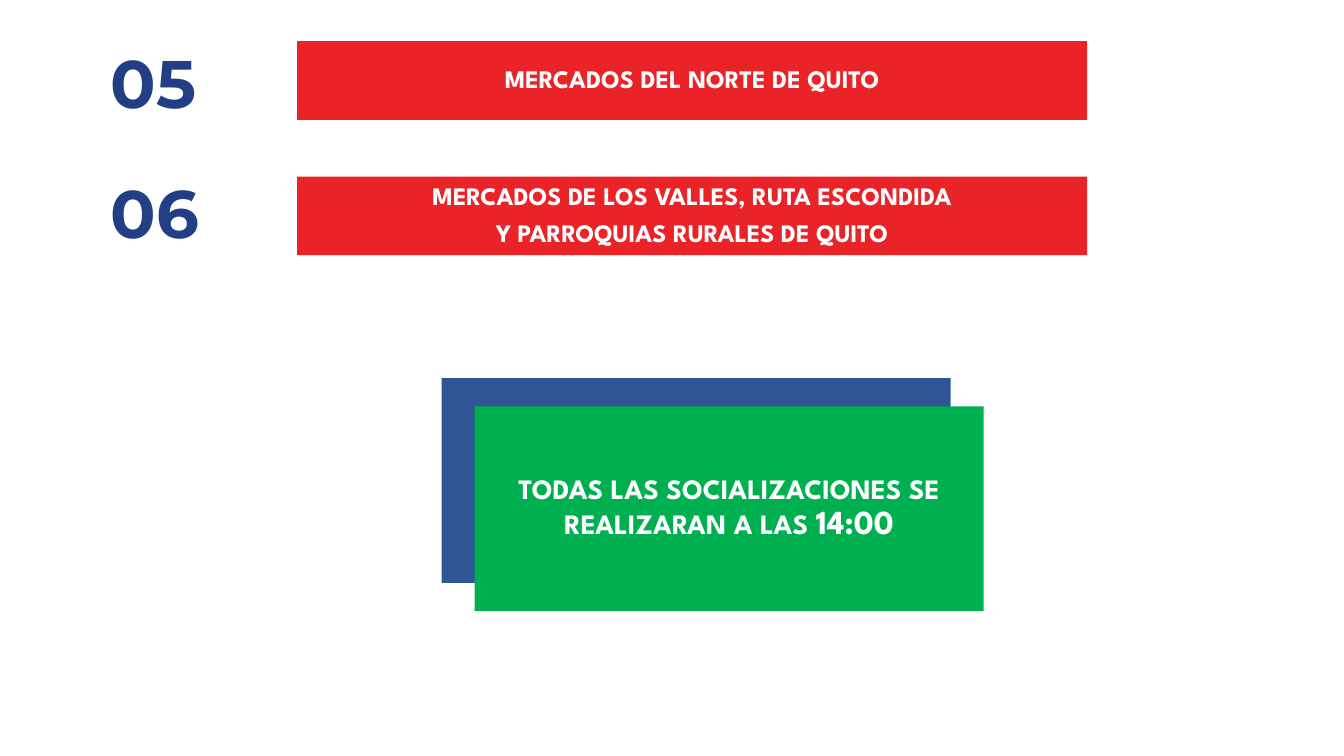
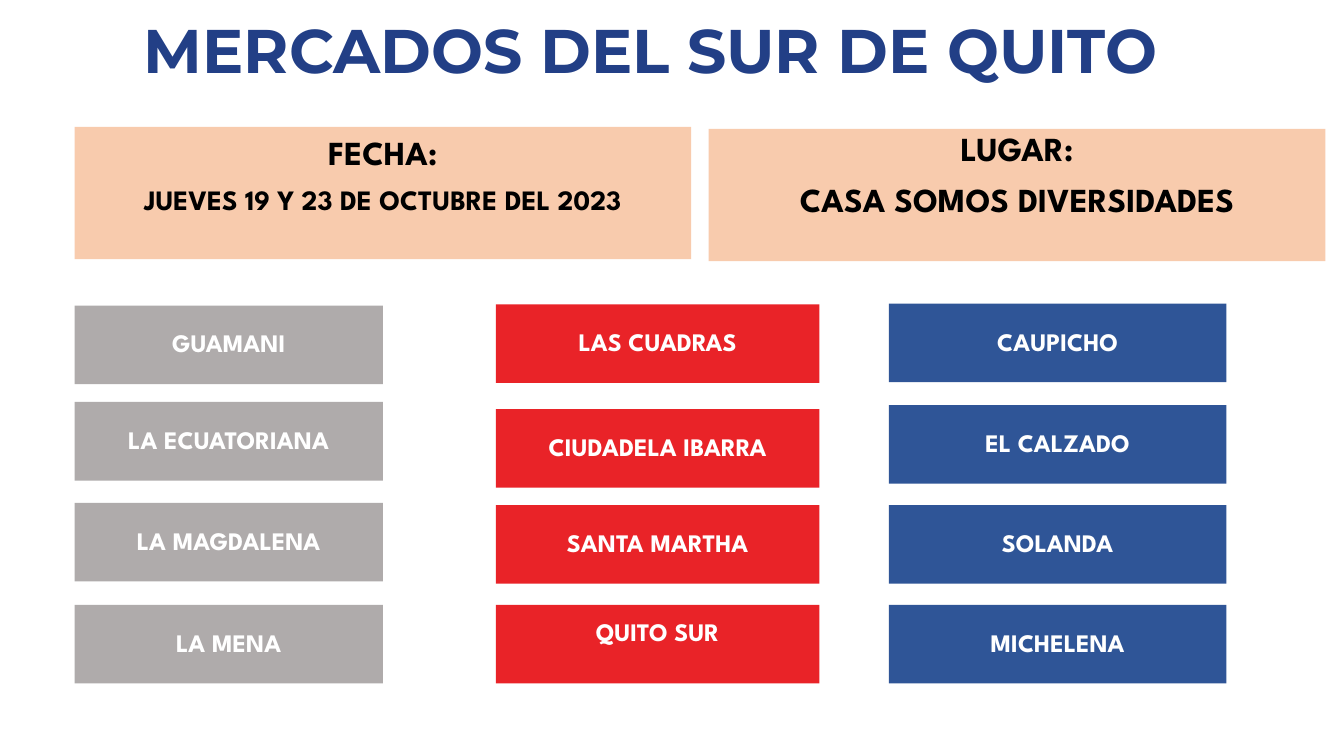
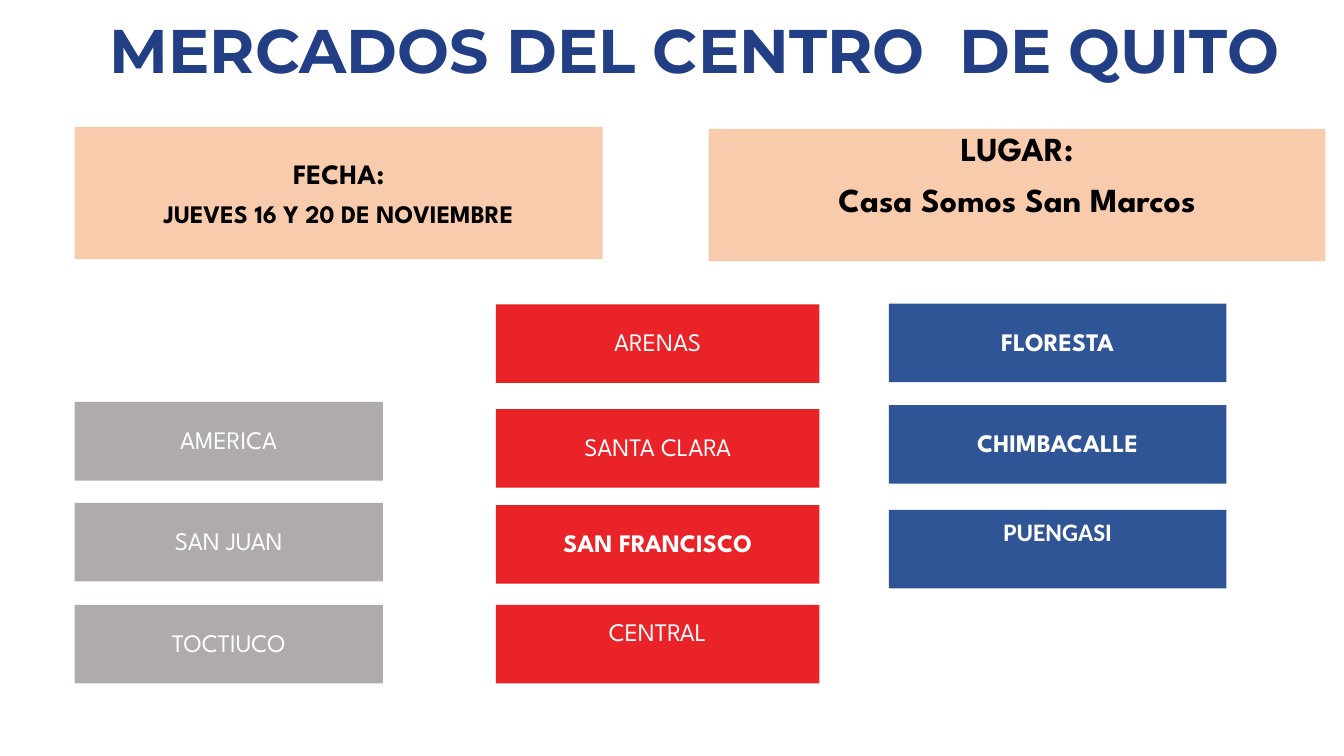
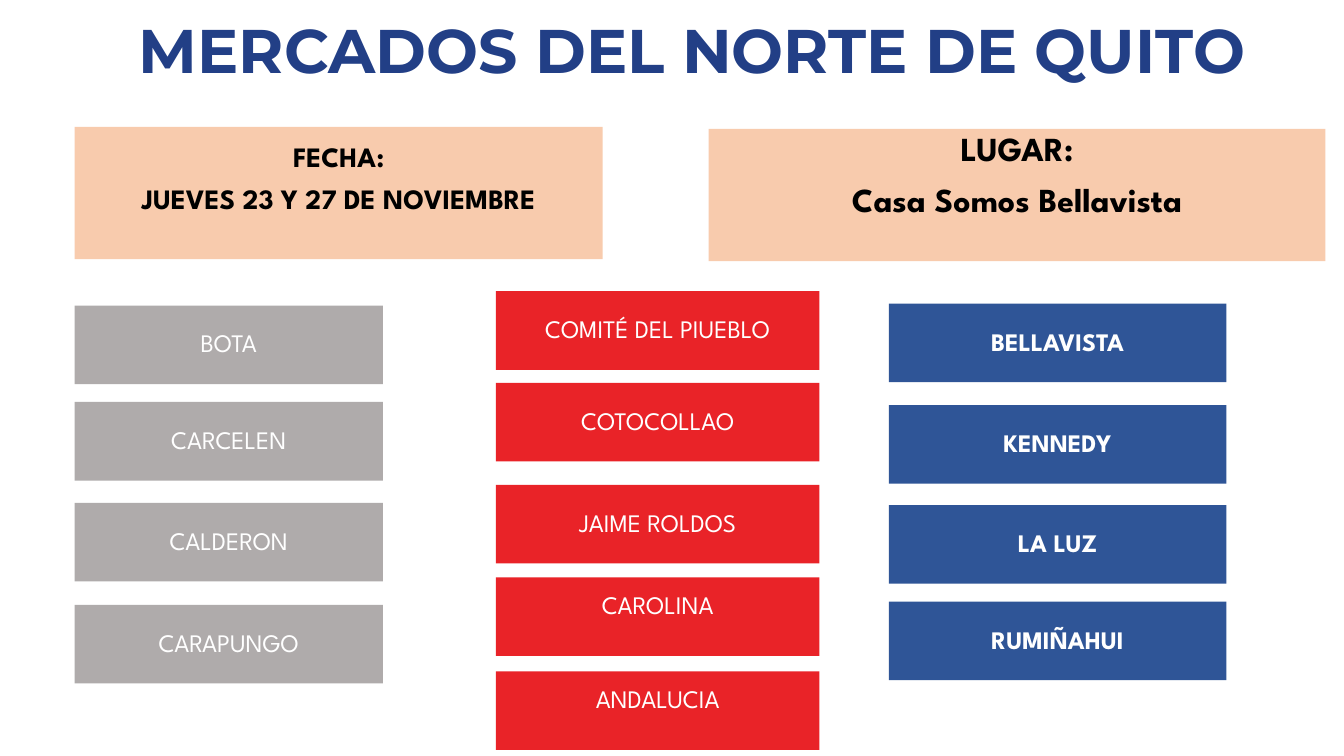
from dataclasses import dataclass

from pptx import Presentation
from pptx.dml.color import RGBColor
from pptx.enum.shapes import MSO_SHAPE
from pptx.enum.text import MSO_ANCHOR, PP_ALIGN
from pptx.util import Cm, Pt

RECT = MSO_SHAPE.RECTANGLE
TOP, MIDDLE = MSO_ANCHOR.TOP, MSO_ANCHOR.MIDDLE
LEFT, CENTER = PP_ALIGN.LEFT, PP_ALIGN.CENTER


class Theme:
    navy = RGBColor.from_string("223F86")
    blue = RGBColor.from_string("2F5597")
    red = RGBColor.from_string("E92328")
    gray = RGBColor.from_string("AFABAB")
    green = RGBColor.from_string("00B050")
    peach = RGBColor.from_string("F8CBAD")
    white = RGBColor.from_string("FFFFFF")
    black = RGBColor.from_string("000000")
    body, heading, plain = "League Spartan", "Montserrat", "Calibri"
    bar, notice, info, title, number = 18, 20, 24, 44, 48
    line_spacing, space_after = 0.9, 0.42


@dataclass
class Bar:
    text: str
    bold: bool = True
    raised: bool = False
    font: str = Theme.body
    anchor: int = MIDDLE
    spacing: float = Theme.line_spacing


def light(text, raised=False):
    return Bar(text, False, raised)


BAR_HEIGHT = 1.98
AGENDA = [
    ("05", 1.04, ["MERCADOS DEL NORTE DE QUITO"]),
    ("06", 4.45, ["MERCADOS DE LOS VALLES, RUTA ESCONDIDA",
                  "Y PARROQUIAS RURALES DE QUITO"]),
]
NUMBER_TOPS = [1.17, 4.45]
NOTICE = "TODAS LAS SOCIALIZACIONES SE REALIZARAN A LAS "
NOTICE_TIME = "14:00"

COLUMNS = [
    (1.88, 7.77, Theme.gray),
    (12.5, 8.15, Theme.red),
    (22.4, 8.51, Theme.blue),
]
GRAY_TOPS = [7.7, 10.13, 12.67, 15.24]
RED_TOPS = [7.67, 10.31, 12.73, 15.24]
BLUE_TOPS = [7.65, 10.21, 12.73, 15.24]

MARKETS = [
    {
        "title": "MERCADOS DEL SUR DE QUITO", "title_width": 28.6,
        "date": [("FECHA:", Theme.info),
                 ("JUEVES 19 Y 23 DE OCTUBRE DEL 2023", Theme.notice)],
        "date_width": 15.54, "date_inset": 0.23,
        "place": "CASA SOMOS DIVERSIDADES",
        "columns": [
            (GRAY_TOPS, [Bar("GUAMANI"), Bar("LA ECUATORIANA"),
                         Bar("LA MAGDALENA"), Bar("LA MENA")]),
            (RED_TOPS, [Bar("LAS CUADRAS"), Bar("CIUDADELA IBARRA"),
                        Bar("SANTA MARTHA"), Bar("QUITO SUR", raised=True)]),
            (BLUE_TOPS, [Bar("CAUPICHO"), Bar("EL CALZADO"),
                         Bar("SOLANDA"), Bar("MICHELENA")]),
        ],
    },
    {
        "title": "MERCADOS DEL CENTRO  DE QUITO", "title_width": 30.81,
        "date": [("FECHA:", Theme.notice),
                 ("JUEVES 16 Y 20 DE NOVIEMBRE", Theme.bar)],
        "date_width": 13.31, "date_inset": 0.83,
        "place": "Casa Somos San Marcos",
        "columns": [
            (GRAY_TOPS[1:], [light("AMERICA"), light("SAN JUAN"),
                             light("TOCTIUCO")]),
            (RED_TOPS, [light("ARENAS"), light("SANTA CLARA"),
                        Bar("SAN FRANCISCO"), light("CENTRAL", True)]),
            (BLUE_TOPS[:2] + [12.85],
             [Bar("FLORESTA"), Bar("CHIMBACALLE"),
              Bar("PUENGASI", font=Theme.plain, anchor=TOP, spacing=1.0)]),
        ],
    },
    {
        "title": "MERCADOS DEL NORTE DE QUITO", "title_width": 30.68,
        "date": [("FECHA:", Theme.notice),
                 ("JUEVES 23 Y 27 DE NOVIEMBRE", Theme.notice)],
        "date_width": 13.31, "date_inset": 0.42,
        "place": "Casa Somos Bellavista",
        "columns": [
            (GRAY_TOPS, [light("BOTA"), light("CARCELEN"),
                         light("CALDERON"), light("CARAPUNGO")]),
            ([7.34, 9.65, 12.22, 14.55, 16.92],
             [light("COMITÉ DEL PIUEBLO"), light("COTOCOLLAO"),
              light("JAIME ROLDOS"), light("CAROLINA", True),
              light("ANDALUCIA", True)]),
            (BLUE_TOPS[:3] + [15.16], [Bar("BELLAVISTA"), Bar("KENNEDY"),
                                       Bar("LA LUZ"), Bar("RUMIÑAHUI")]),
        ],
    },
]


def set_frame(sp, anchor=MIDDLE, top=0.15, bottom=0.15):
    tf = sp.text_frame
    tf.word_wrap = True
    tf.vertical_anchor = anchor
    tf.margin_left = tf.margin_right = Cm(0.28)
    tf.margin_top, tf.margin_bottom = Cm(top), Cm(bottom)
    return tf


def write(tf, lines, color, font=Theme.body, bold=True, align=CENTER,
          spacing=Theme.line_spacing):
    for i, (text, size) in enumerate(lines):
        p = tf.add_paragraph() if i else tf.paragraphs[0]
        p.alignment = align
        p.line_spacing = spacing
        if i < len(lines) - 1:
            p.space_after = Pt(round(size * Theme.space_after, 1))
        p.font.name, p.font.size, p.font.bold = font, Pt(size), bold
        p.font.color.rgb = color
        p.add_run().text = text


def add_rect(s, left, top, width, height, color):
    sp = s.shapes.add_shape(RECT, Cm(left), Cm(top), Cm(width), Cm(height))
    sp.shadow.inherit = False
    sp.fill.solid()
    sp.fill.fore_color.rgb = color
    sp.line.fill.background()
    return sp


def add_heading(s, left, top, width, height, text, size, align=CENTER):
    sp = s.shapes.add_textbox(Cm(left), Cm(top), Cm(width), Cm(height))
    tf = set_frame(sp)
    write(tf, [(text, size)], Theme.navy, Theme.heading, align=align)


def add_bar(s, left, top, width, color, bar):
    sp = add_rect(s, left, top, width, BAR_HEIGHT, color)
    tf = set_frame(sp, bar.anchor, bottom=0.67 if bar.raised else 0.15)
    write(tf, [(bar.text, Theme.bar)], Theme.white, bar.font, bar.bold,
          spacing=bar.spacing)


def add_info(s, left, top, width, inset, lines):
    sp = add_rect(s, left, top, width, 3.33, Theme.peach)
    write(set_frame(sp, TOP, top=inset), lines, Theme.black)


def agenda_slide(s):
    for (number, top, lines), number_top in zip(AGENDA, NUMBER_TOPS):
        add_heading(s, 2.51, number_top, 2.9, 2.03, number, Theme.number, LEFT)
        sp = add_rect(s, 7.49, top, 19.91, BAR_HEIGHT, Theme.red)
        write(set_frame(sp), [(line, Theme.bar) for line in lines], Theme.white)
    add_rect(s, 11.13, 9.53, 12.83, 5.16, Theme.blue)
    tf = set_frame(add_rect(s, 11.96, 10.24, 12.83, 5.16, Theme.green))
    write(tf, [(NOTICE, Theme.notice)], Theme.white)
    r = tf.paragraphs[0].add_run()
    r.text = NOTICE_TIME
    r.font.size = Pt(Theme.info)


def market_slide(s, market):
    add_heading(s, 2.11, -0.48, market["title_width"], 3.68,
                market["title"], Theme.title)
    add_info(s, 1.88, 3.2, market["date_width"], market["date_inset"],
             market["date"])
    add_info(s, 17.86, 3.25, 15.54, 0.1,
             [("LUGAR:", Theme.info), (market["place"], Theme.info)])
    for (left, width, color), (tops, bars) in zip(COLUMNS, market["columns"]):
        for top, bar in zip(tops, bars):
            add_bar(s, left, top, width, color, bar)


def main():
    prs = Presentation()
    prs.slide_width, prs.slide_height = Cm(33.87), Cm(19.05)
    blank = prs.slide_layouts[6]
    agenda_slide(prs.slides.add_slide(blank))
    for market in MARKETS:
        market_slide(prs.slides.add_slide(blank), market)
    prs.save("out.pptx")


if __name__ == "__main__":
    main()
